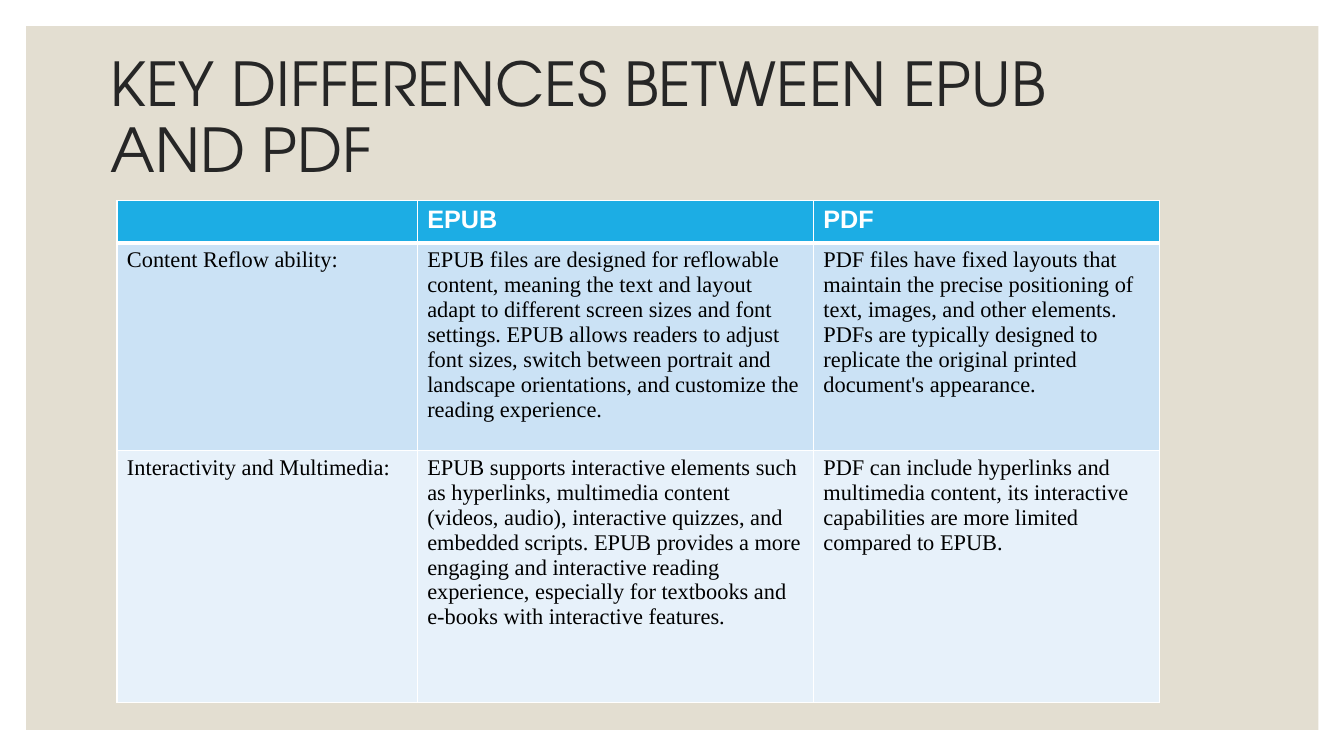
from lxml.etree import SubElement
from pptx import Presentation
from pptx.dml.color import RGBColor
from pptx.enum.shapes import MSO_SHAPE
from pptx.enum.text import MSO_ANCHOR
from pptx.oxml.ns import qn
from pptx.util import Pt

THEME = {
    "panel": "E3DED1",
    "line": "FFFFFF",
    "fills": ["1CADE4", "CBE2F5", "E7F1FA"],
    "title": {"name": "TeX Gyre Adventor", "size": Pt(43.2), "bold": False, "color": "262626"},
    "head": {"name": "Arial", "size": Pt(18), "bold": True, "color": "FFFFFF"},
    "body": {"name": "Times New Roman", "size": Pt(16), "bold": False, "color": "000000"},
}
COLS = [214.5, 283, 247]
ROWS = [30.2, 148.3, 180]
CELLS = [
    ["", "EPUB", "PDF"],
    [
        "Content Reflow ability:",
        "EPUB files are designed for reflowable content, meaning the text and layout "
        "adapt to different screen sizes and font settings. EPUB allows readers to adjust "
        "font sizes, switch between portrait and landscape orientations, and customize the "
        "reading experience.",
        "PDF files have fixed layouts that maintain the precise positioning of text, images, "
        "and other elements. PDFs are typically designed to replicate the original printed "
        "document's appearance.",
    ],
    [
        "Interactivity and Multimedia:",
        "EPUB supports interactive elements such as hyperlinks, multimedia content (videos, "
        "audio), interactive quizzes, and embedded scripts. EPUB provides a more engaging and "
        "interactive reading experience, especially for textbooks and e-books with "
        "interactive features.",
        "PDF can include hyperlinks and multimedia content, its interactive capabilities are "
        "more limited compared to EPUB.",
    ],
]


def write(frame, text, style):
    """Put text in the frame's first paragraph and apply the style."""
    run = frame.paragraphs[0].add_run()
    run.text = text
    for key, value in style.items():
        if key == "color":
            run.font.color.rgb = RGBColor.from_string(value)
        else:
            setattr(run.font, key, value)


def edge(cell, side, width):
    """Draw one border of a cell; call before the cell gets its fill."""
    line = SubElement(cell._tc.get_or_add_tcPr(), qn(f"a:ln{side}"), w=str(Pt(width)))
    fill = SubElement(line, qn("a:solidFill"))
    SubElement(fill, qn("a:srgbClr"), val=THEME["line"])


deck = Presentation()
deck.slide_width, deck.slide_height = Pt(960), Pt(540)
slide = deck.slides.add_slide(deck.slide_layouts[6])

panel = slide.shapes.add_shape(MSO_SHAPE.RECTANGLE, Pt(18.7), Pt(18.7), Pt(923), Pt(502.6))
panel.shadow.inherit = False
panel.fill.solid()
panel.fill.fore_color.rgb = RGBColor.from_string(THEME["panel"])
panel.line.fill.background()

title = slide.shapes.add_textbox(Pt(72), Pt(54), Pt(786), Pt(63.4)).text_frame
title.word_wrap = True
title.vertical_anchor = MSO_ANCHOR.MIDDLE
title.paragraphs[0].line_spacing = 0.9
write(title, "KEY DIFFERENCES BETWEEN EPUB AND PDF", THEME["title"])

table = slide.shapes.add_table(
    len(ROWS), len(COLS), Pt(83.5), Pt(143.3), Pt(sum(COLS)), Pt(sum(ROWS))
).table
for col, width in zip(table.columns, COLS):
    col.width = Pt(width)
for row, height in zip(table.rows, ROWS):
    row.height = Pt(height)

for r, texts in enumerate(CELLS):
    for c, text in enumerate(texts):
        cell = table.cell(r, c)
        for side in "LRTB":
            thick = (r, side) in [(0, "B"), (1, "T")]
            edge(cell, side, 3 if thick else 1)
        cell.fill.solid()
        cell.fill.fore_color.rgb = RGBColor.from_string(THEME["fills"][r])
        if text:
            write(cell.text_frame, text, THEME["body" if r else "head"])

deck.save("out.pptx")
